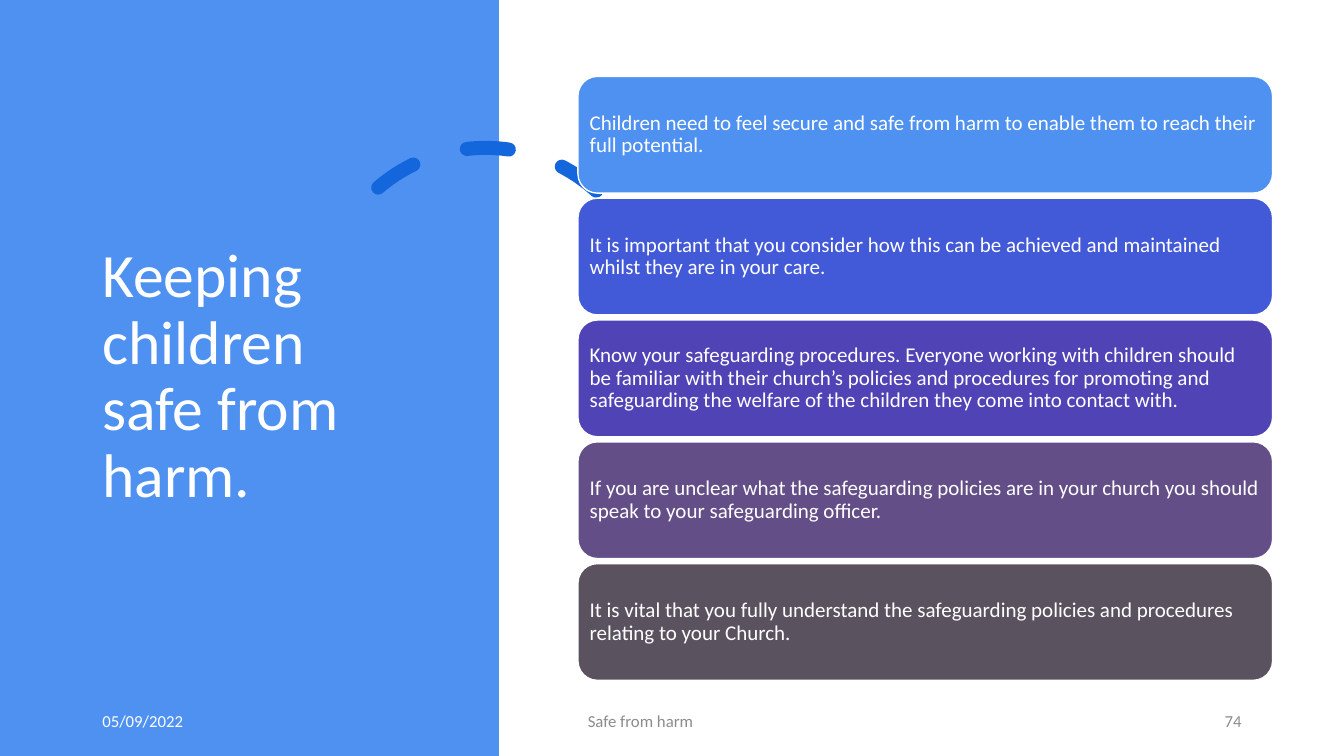
"""Build the slide on keeping children safe from harm."""
from pptx import Presentation
from pptx.dml.color import RGBColor
from pptx.enum.dml import MSO_LINE as Dash
from pptx.enum.shapes import MSO_SHAPE as Kind
from pptx.enum.text import MSO_ANCHOR as Anchor, PP_ALIGN as Align
from pptx.oxml.ns import qn
from pptx.util import Inches, Pt

HUES = {"white": "FFFFFF", "sky": "4E91F0", "arc": "1366DC", "grey": "8C8C8C",
        "blue": "435AD8", "violet": "5043B5", "plum": "644E87", "slate": "5B5260"}
COLS, ROWS = 16, 9

deck = Presentation()
deck.slide_width, deck.slide_height = Inches(40 / 3), Inches(7.5)
cell_w, cell_h = deck.slide_width / COLS, deck.slide_height / ROWS
slide = deck.slides.add_slide(deck.slide_layouts[6])
shapes = slide.shapes


def place(col, row, wide, high):
    return (round(col * cell_w), round(row * cell_h),
            round(wide * cell_w), round(high * cell_h))


def write(shape, text, size, hue, align=Align.LEFT, lead=1.0):
    frame = shape.text_frame
    frame.word_wrap = True
    frame.vertical_anchor = Anchor.MIDDLE
    para = frame.paragraphs[0]
    para.text = text
    para.alignment = align
    para.line_spacing = lead
    para.font.name = "Calibri"
    para.font.size = Pt(size)
    para.font.color.rgb = RGBColor.from_string(HUES[hue])
    return frame


panel = shapes.add_shape(Kind.RECTANGLE, *place(0, 0, 5.94, ROWS))
panel.shadow.inherit = False
panel.fill.solid()
panel.fill.fore_color.rgb = RGBColor.from_string(HUES["sky"])
panel.line.fill.background()

arc = shapes.add_shape(Kind.ARC, *place(3.82, 1.76, 3.92, 3.92))
arc.shadow.inherit = False
arc.rotation = 345.8
arc.adjustments[0] = 146.13
arc.adjustments[1] = 0
arc.fill.background()
arc.line.color.rgb = RGBColor.from_string(HUES["arc"])
arc.line.width = Pt(10)
arc.line.dash_style = Dash.DASH
arc.element.spPr.find(qn("a:ln")).set("cap", "rnd")

title = shapes.add_textbox(*place(1.1, 0.84, 3.88, 7.31))
write(title, "Keeping children safe from harm.", 44, "white", lead=0.9)

footer = [
    (1.1, 3.6, "05/09/2022", "white", Align.LEFT),
    (6.88, 5.57, "Safe from harm", "grey", Align.LEFT),
    (12.68, 2.22, "74", "grey", Align.RIGHT),
]
for col, wide, text, hue, align in footer:
    note = shapes.add_textbox(*place(col, 8.34, wide, 0.48))
    write(note, text, 12, hue, align).paragraphs[0].space_after = Pt(6)

points = [
    ("sky", "Children need to feel secure and safe from harm to enable them "
            "to reach their full potential."),
    ("blue", "It is important that you consider how this can be achieved and "
             "maintained whilst they are in your care."),
    ("violet", "Know your safeguarding procedures. Everyone working with children "
               "should be familiar with their church’s policies and procedures for "
               "promoting and safeguarding the welfare of the children they come "
               "into contact with."),
    ("plum", "If you are unclear what the safeguarding policies are in your church "
             "you should speak to your safeguarding officer."),
    ("slate", "It is vital that you fully understand the safeguarding policies and "
              "procedures relating to your Church."),
]
for i, (hue, text) in enumerate(points):
    card = shapes.add_shape(Kind.ROUNDED_RECTANGLE,
                            *place(6.88, 0.91 + 1.45 * i, 8.27, 1.39))
    card.shadow.inherit = False
    card.fill.solid()
    card.fill.fore_color.rgb = RGBColor.from_string(HUES[hue])
    card.line.color.rgb = RGBColor.from_string(HUES["white"])
    card.line.width = Pt(1)
    frame = write(card, text, 15, "white", lead=0.9)
    frame.margin_left = frame.margin_right = Inches(0.06)
    frame.margin_top = frame.margin_bottom = Inches(0.06)

deck.save("out.pptx")
